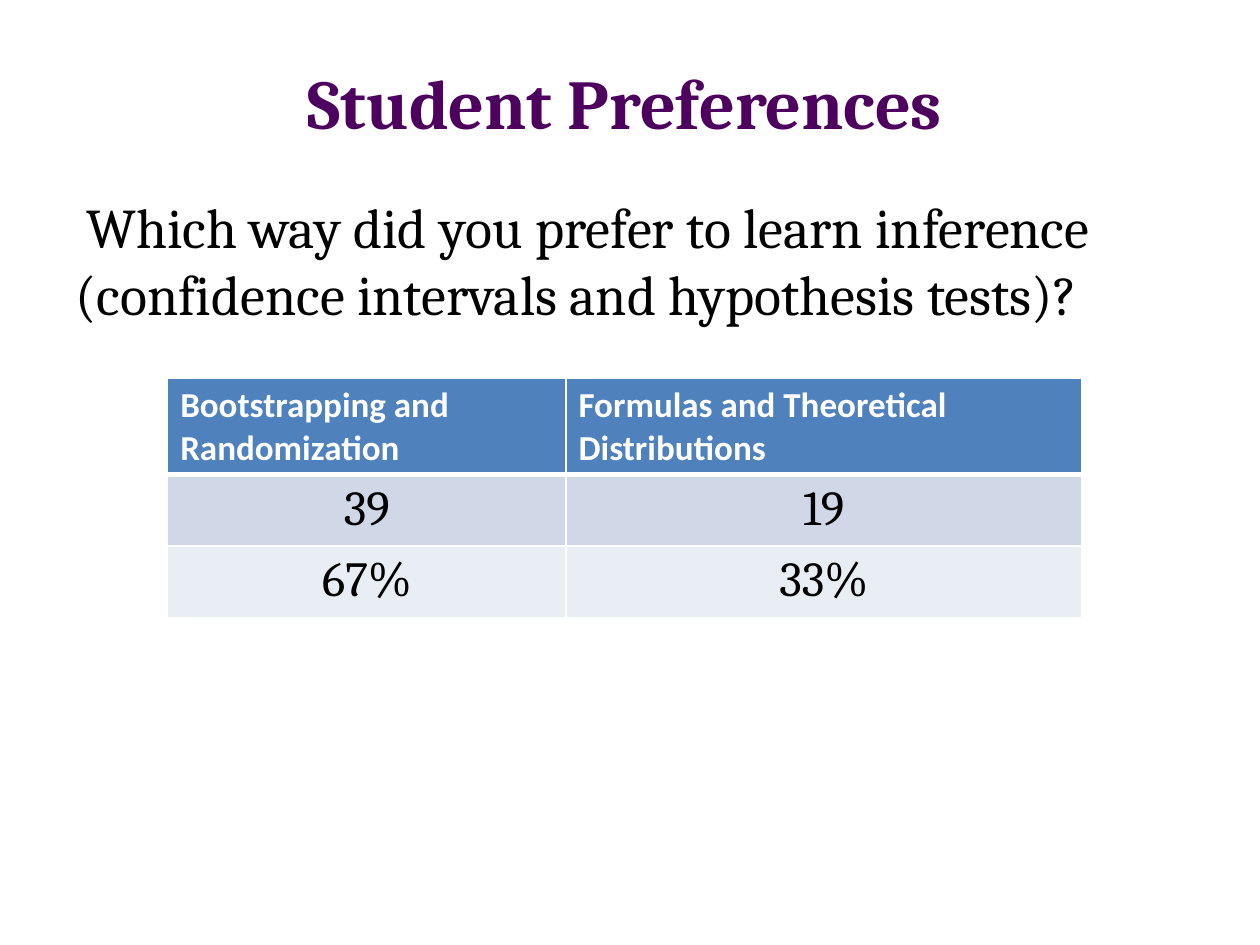
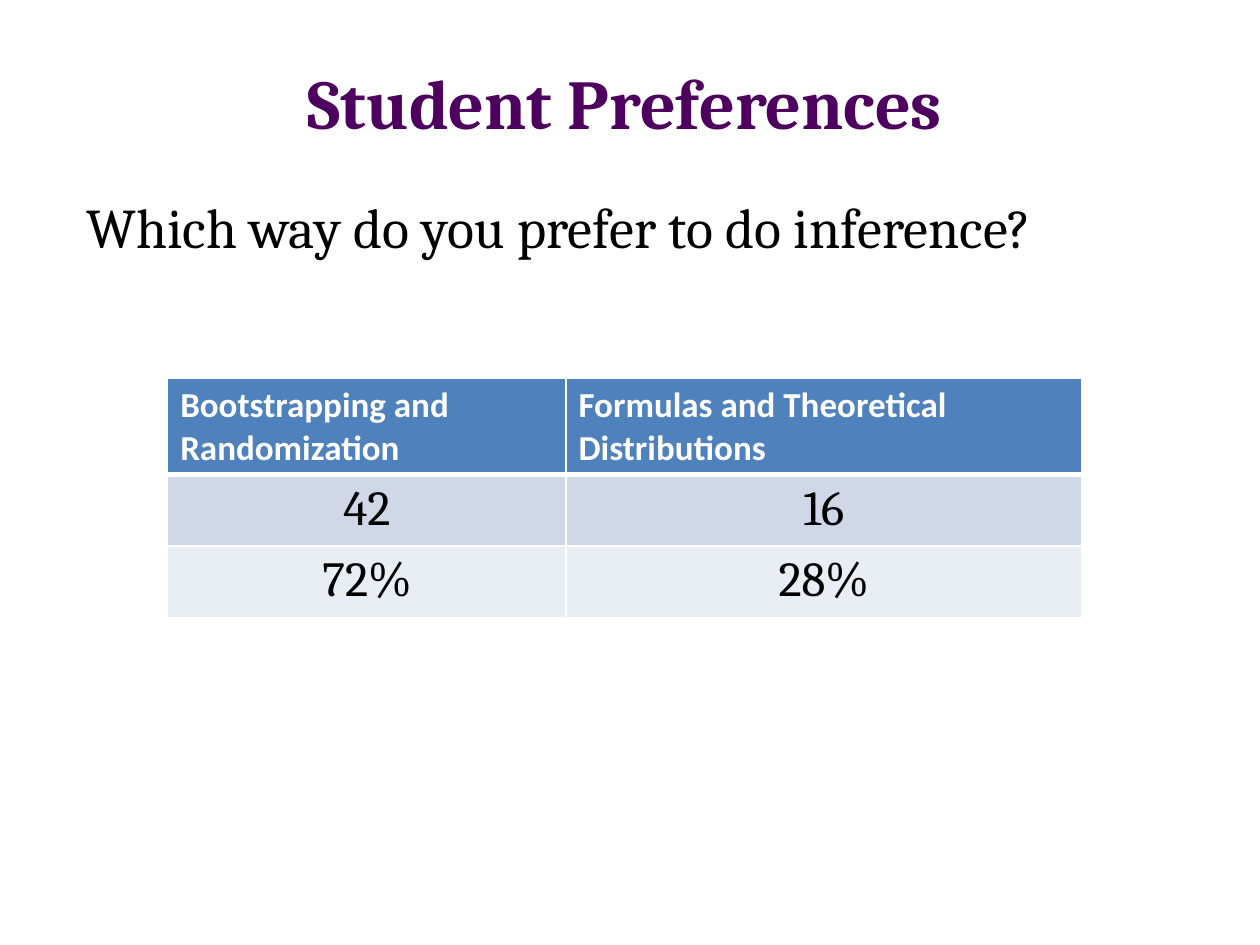
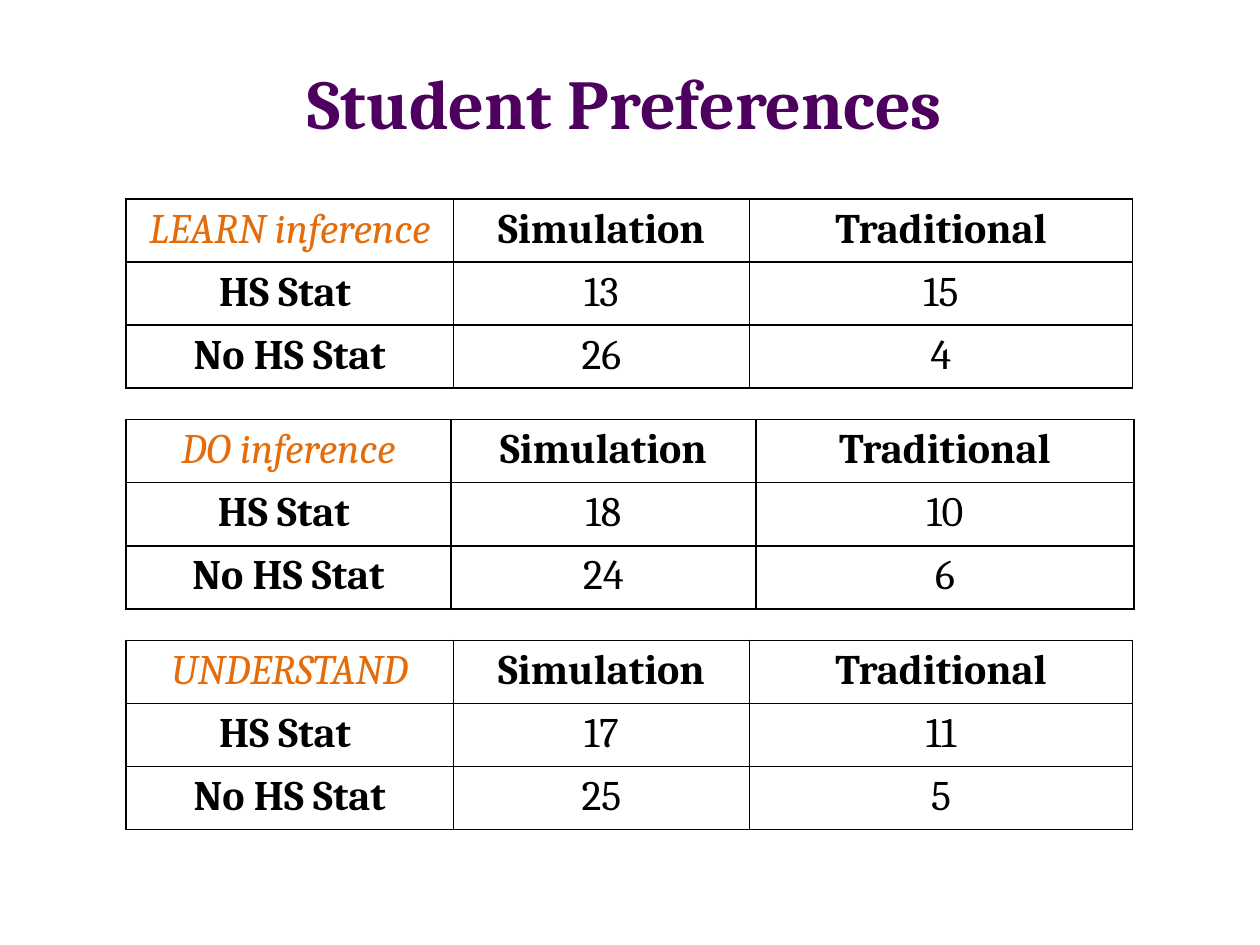
from lxml.etree import SubElement
from pptx import Presentation
from pptx.dml.color import RGBColor
from pptx.enum.text import PP_ALIGN
from pptx.oxml.ns import qn
from pptx.util import Cm, Pt

PURPLE = RGBColor(0x4E, 0x00, 0x5F)
ORANGE = RGBColor(0xE4, 0x6C, 0x0A)
BLUE = RGBColor(0x4F, 0x81, 0xBD)
BLUE_BAND = RGBColor(0xD0, 0xD8, 0xE8)
PALE_BAND = RGBColor(0xE9, 0xED, 0xF4)
BLACK = RGBColor(0, 0, 0)
WHITE = RGBColor(0xFF, 0xFF, 0xFF)
SERIF, SANS = "Cambria", "Calibri"

# Boxes are left, top, width, height in centimetres
TITLE_BOX = (1.27, 1.07, 22.66, 3.38)
VOTE_BOX = (3.38, 7.62, 18.42, 4.76)
COUNT_LEFT, COUNT_TOP, COUNT_PITCH = 2.54, 4.01, 4.45
COUNT_ROW = 1.23
VOTE_HEADS = ("Bootstrapping and Randomization",
              "Formulas and Theoretical Distributions")
WIDE_LABEL = (6.6, 5.97, 7.72)
WIDE_MIDDLE = (6.55, 6.15, 7.62)

VOTES = [
    ("Which way did you prefer to learn inference "
     "(confidence intervals and hypothesis tests)?", 8.43,
     [("39", "19"), ("67%", "33%")]),
    ("Which way do you prefer to do inference?", 7.06,
     [("42", "16"), ("72%", "28%")]),
]
COUNTS = [
    ("LEARN inference", WIDE_LABEL, ("13", "15"), ("26", "4")),
    ("DO inference", WIDE_MIDDLE, ("18", "10"), ("24", "6")),
    ("UNDERSTAND", WIDE_LABEL, ("17", "11"), ("25", "5")),
]


def style(p, size, color=BLACK, name=SERIF, bold=False, italic=False,
          align=PP_ALIGN.CENTER):
    p.alignment = align
    for r in p.runs:
        font = r.font
        font.size, font.name = Pt(size), name
        font.bold, font.italic = bold, italic
        font.color.rgb = color


def add_text(s, box, text):
    tf = s.shapes.add_textbox(*map(Cm, box)).text_frame
    tf.word_wrap = True
    tf.text = text
    return tf.paragraphs[0]


def add_title(s, box):
    style(add_text(s, box, "Student Preferences"), 40, PURPLE, bold=True)


def add_question(s, box, text):
    p = add_text(s, box, text)
    p._p.get_or_add_pPr().set("indent", str(Cm(0.22)))
    p.space_after = Pt(18)
    style(p, 32, align=PP_ALIGN.LEFT)


def set_borders(cell, color, top=1, bottom=1):
    tcPr = cell._tc.get_or_add_tcPr()
    for side, width in (("L", 1), ("R", 1), ("T", top), ("B", bottom)):
        ln = SubElement(tcPr, qn(f"a:ln{side}"), w=str(Pt(width)))
        fill = SubElement(ln, qn("a:solidFill"))
        SubElement(fill, qn("a:srgbClr"), val=str(color))


def add_grid(s, box, rows, widths, heights):
    """Add a table holding the texts and return it without banding."""
    table = s.shapes.add_table(len(rows), len(widths), *map(Cm, box)).table
    table.first_row = table.horz_banding = False
    for column, width in zip(table.columns, widths):
        column.width = Cm(width)
    for row, height, texts in zip(table.rows, heights, rows):
        row.height = Cm(height)
        for cell, text in zip(row.cells, texts):
            cell.text_frame.text = text
    return table


def fill_cell(cell, color):
    cell.fill.solid()
    cell.fill.fore_color.rgb = color


def add_vote_table(s, box, votes):
    width, height = box[2:]
    widths = (8.03, width - 8.03)
    heights = (0.4 * height, 0.3 * height, 0.3 * height)
    table = add_grid(s, box, [VOTE_HEADS, *votes], widths, heights)
    for i, color in enumerate((BLUE, BLUE_BAND, PALE_BAND)):
        for cell in table.rows[i].cells:
            set_borders(cell, WHITE, top=3 if i == 1 else 1,
                        bottom=3 if i == 0 else 1)
            fill_cell(cell, color)
            p = cell.text_frame.paragraphs[0]
            if i == 0:
                style(p, 20, WHITE, SANS, bold=True, align=PP_ALIGN.LEFT)
            else:
                style(p, 28)


def add_count_table(s, box, topic, widths, prior, no_prior):
    rows = [(topic, "Simulation", "Traditional"),
            ("HS Stat ", *prior), ("No HS Stat", *no_prior)]
    table = add_grid(s, box, rows, widths, [box[3] / 3] * 3)
    for i, row in enumerate(table.rows):
        for j, cell in enumerate(row.cells):
            set_borders(cell, BLACK)
            fill_cell(cell, WHITE)
            corner = i == j == 0
            style(cell.text_frame.paragraphs[0], 24,
                  ORANGE if corner else BLACK, italic=corner,
                  bold=not corner and (i == 0 or j == 0))


def add_slide(prs):
    s = prs.slides.add_slide(prs.slide_layouts[6])
    add_title(s, TITLE_BOX)
    return s


def add_vote_slide(prs, question, height, votes):
    s = add_slide(prs)
    add_question(s, (1.27, 3.76, 22.66, height), question)
    add_vote_table(s, VOTE_BOX, votes)


def add_count_slide(prs):
    s = add_slide(prs)
    for i, (topic, widths, prior, no_prior) in enumerate(COUNTS):
        box = (COUNT_LEFT, COUNT_TOP + i * COUNT_PITCH,
               sum(widths), 3 * COUNT_ROW)
        add_count_table(s, box, topic, widths, prior, no_prior)


def main():
    prs = Presentation()
    prs.slide_width, prs.slide_height = Cm(25.4), Cm(19.05)
    for vote in VOTES:
        add_vote_slide(prs, *vote)
    add_count_slide(prs)
    prs.save("out.pptx")


if __name__ == "__main__":
    main()
